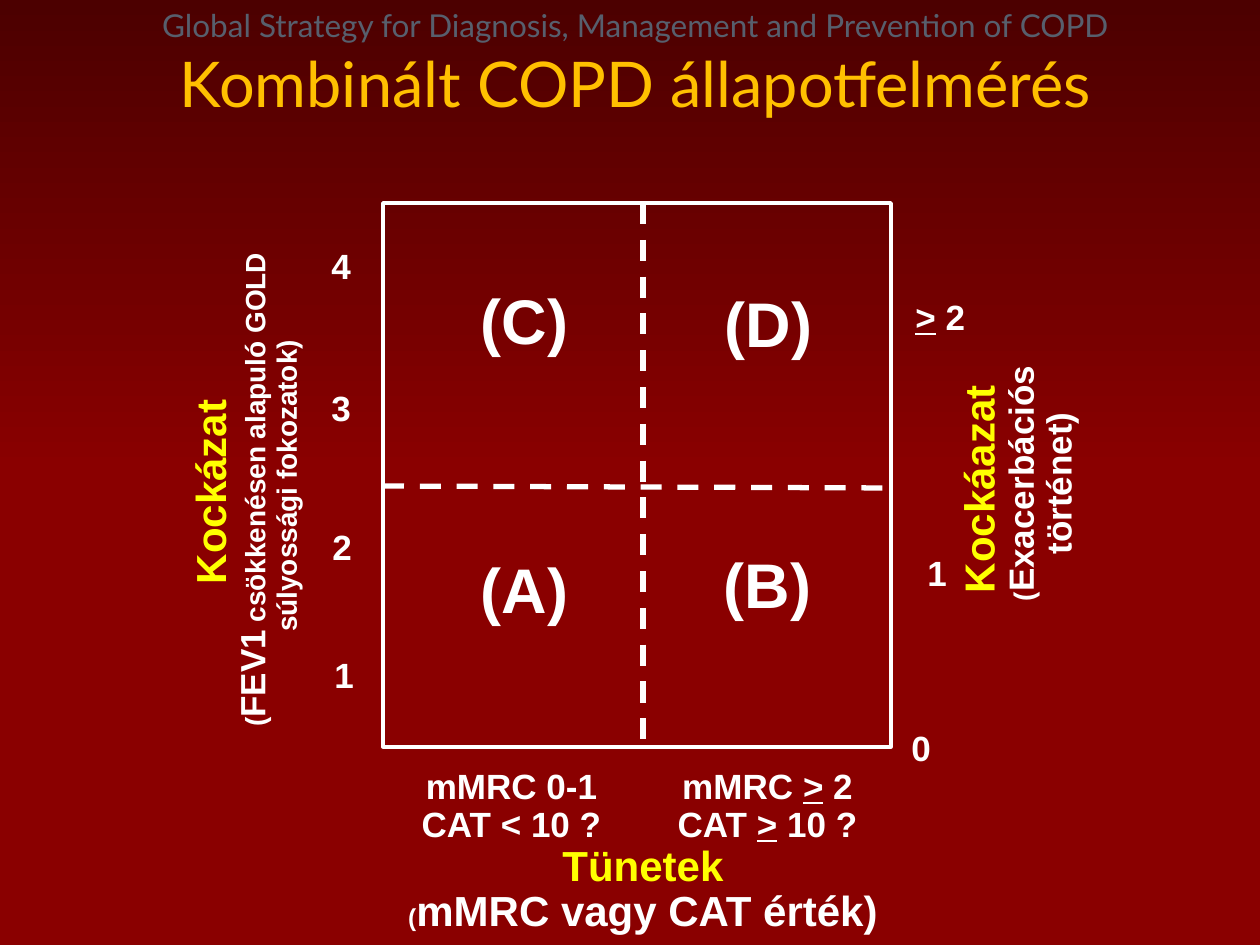
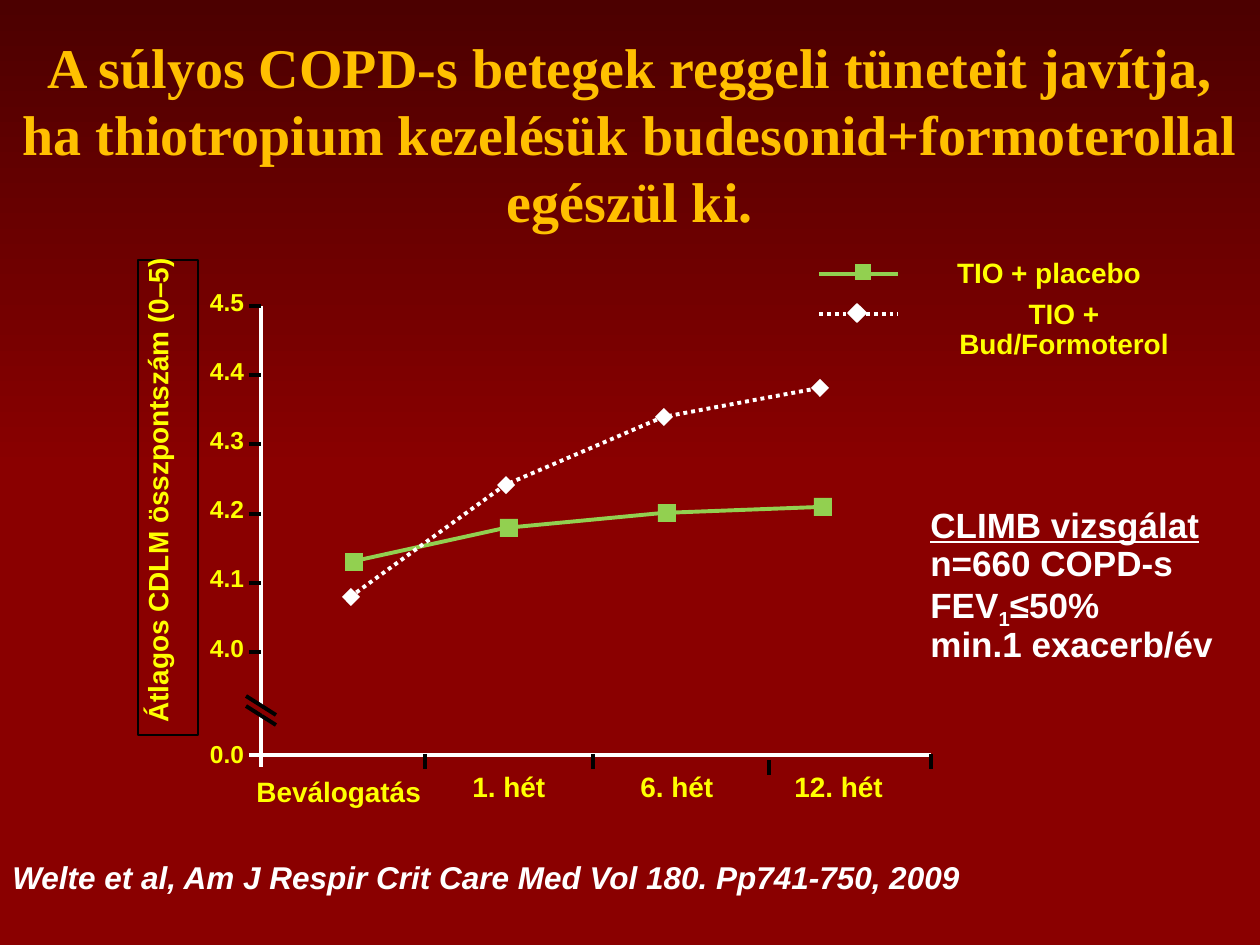
import pptx
import pptx.dml.color
import pptx.enum.dml
import pptx.enum.shapes
import pptx.enum.text
import pptx.oxml.ns
import pptx.util
from dataclasses import dataclass
from lxml import etree

RGBColor = pptx.dml.color.RGBColor
WHITE = RGBColor(0xFF, 0xFF, 0xFF)
BLACK = RGBColor(0x00, 0x00, 0x00)
YELLOW = RGBColor(0xFF, 0xFF, 0x00)
GOLD = RGBColor(0xFF, 0xC0, 0x00)
GREY = RGBColor(0x57, 0x5F, 0x6D)
GREEN = RGBColor(0x92, 0xD0, 0x50)
DARK_RED = RGBColor(0x4C, 0x00, 0x00)
RED = RGBColor(0x8A, 0x00, 0x00)

LEFT = pptx.enum.text.PP_ALIGN.LEFT
CENTER = pptx.enum.text.PP_ALIGN.CENTER
DASH = pptx.enum.dml.MSO_LINE.DASH
DOTS = pptx.enum.dml.MSO_LINE.ROUND_DOT
SHAPE = pptx.enum.shapes.MSO_SHAPE

EMU_PER_PX = 914400 / 126
TITLE_ONLY = 5
AXIS_X, AXIS_TOP, AXIS_BOTTOM = 261, 306, 755
SCALE_HEIGHT = 346
MARKER_SIZE = 18
TICK_LABELS = ["4.5", "4.4", "4.3", "4.2", "4.1", "4.0"]
WEEKS = ["Beválogatás", "1. hét", "6. hét", "12. hét"]
PLACEBO_POINTS = [(350, 562), (505, 528), (663, 513), (819, 507)]
FORMOTEROL_POINTS = [(350, 597), (505, 485), (663, 417), (819, 388)]


@dataclass
class Run:
    text: str
    size: int = 20
    color: RGBColor = WHITE
    underline: bool = False
    italic: bool = False
    baseline: int = 0


def px(*lengths):
    return [pptx.util.Emu(round(length * EMU_PER_PX)) for length in lengths]


def style_font(font, name, size, color, bold):
    font.name = name
    font.size = pptx.util.Pt(size)
    font.color.rgb = color
    font.bold = bold


def style_line(line, color, width, dash=None):
    line.color.rgb = color
    line.width = pptx.util.Pt(width)
    if dash:
        line.dash_style = dash


def set_background(master):
    fill = master.background.fill
    fill.gradient()
    fill.gradient_angle = 270
    for stop, color, position in zip(fill.gradient_stops, (DARK_RED, RED), (0, 0.5)):
        stop.color.rgb = color
        stop.position = position


def add_titled_slide(presentation, box, lines, font_name, bold=False):
    """Lines are (text, size, color), separated by line breaks."""
    slide = presentation.slides.add_slide(presentation.slide_layouts[TITLE_ONLY])
    title = slide.shapes.title
    title.left, title.top, title.width, title.height = px(*box)
    frame = title.text_frame
    frame.text = "\v".join(text for text, _, _ in lines)
    frame.auto_size = pptx.enum.text.MSO_AUTO_SIZE.NONE
    frame.vertical_anchor = pptx.enum.text.MSO_ANCHOR.TOP
    paragraph = frame.paragraphs[0]
    paragraph.alignment = CENTER
    for run, (_, size, color) in zip(paragraph.runs, lines):
        style_font(run.font, font_name, size, color, bold)
    return slide


def fill_text(frame, paragraphs, alignment):
    for index, runs in enumerate(paragraphs):
        paragraph = frame.add_paragraph() if index else frame.paragraphs[0]
        paragraph.alignment = alignment
        paragraph.line_spacing = 0.9
        for part in runs:
            run = paragraph.add_run()
            run.text = part.text
            style_font(run.font, "Arial", part.size, part.color, True)
            run.font.underline = part.underline
            run.font.italic = part.italic
            if part.baseline:
                run.font._element.set("baseline", str(part.baseline * 1000))


def add_text(slide, box, paragraphs, alignment=LEFT, wrap=False, rotation=0, margins=True):
    text_box = slide.shapes.add_textbox(*px(*box))
    text_box.rotation = rotation
    frame = text_box.text_frame
    frame.word_wrap = wrap
    frame.auto_size = pptx.enum.text.MSO_AUTO_SIZE.SHAPE_TO_FIT_TEXT
    if not margins:
        frame.margin_left = frame.margin_right = frame.margin_top = frame.margin_bottom = 0
    fill_text(frame, paragraphs, alignment)


def add_line(slide, start, end, color, width=2.25, dash=None):
    connector = slide.shapes.add_connector(
        pptx.enum.shapes.MSO_CONNECTOR.STRAIGHT, *px(*start, *end))
    style_line(connector.line, color, width, dash)
    etree.SubElement(connector._element.spPr, pptx.oxml.ns.qn("a:effectLst"))


def add_shape(slide, kind, box, fill=None, outline=None, width=1):
    shape = slide.shapes.add_shape(kind, *px(*box))
    shape.shadow.inherit = False
    if fill is None:
        shape.fill.background()
    else:
        shape.fill.solid()
        shape.fill.fore_color.rgb = fill
    if outline is None:
        shape.line.fill.background()
    else:
        style_line(shape.line, outline, width)
    return shape


def add_curve(slide, points, color, dash=None):
    builder = slide.shapes.build_freeform(*points[0], scale=EMU_PER_PX)
    builder.add_line_segments(points[1:], close=False)
    curve = builder.convert_to_shape()
    curve.shadow.inherit = False
    curve.fill.background()
    style_line(curve.line, color, 2.25, dash)


def add_markers(slide, kind, points, color, shift):
    """Centre a marker on each point, moved right by shift."""
    half = MARKER_SIZE / 2
    for x, y in points:
        add_shape(slide, kind, (x + shift - half, y - half, MARKER_SIZE, MARKER_SIZE), color)


def add_score_curves(slide):
    add_curve(slide, PLACEBO_POINTS, GREEN)
    add_curve(slide, FORMOTEROL_POINTS, WHITE, DOTS)
    add_markers(slide, SHAPE.RECTANGLE, PLACEBO_POINTS, GREEN, 4)
    add_markers(slide, SHAPE.DIAMOND, FORMOTEROL_POINTS, WHITE, 1)


def add_broken_axes(slide):
    add_line(slide, (AXIS_X, AXIS_TOP), (AXIS_X, 706), WHITE)
    add_line(slide, (AXIS_X, 714), (AXIS_X, 767), WHITE)
    add_line(slide, (249, AXIS_BOTTOM), (931, AXIS_BOTTOM), WHITE)
    for top in (696, 706):
        add_line(slide, (246, top), (276, top + 19), BLACK)
    step = SCALE_HEIGHT / (len(TICK_LABELS) - 1)
    heights = [AXIS_TOP + step * index for index in range(len(TICK_LABELS))]
    for y in heights:
        add_line(slide, (249, y), (AXIS_X, y), BLACK)
    for label, y in zip(TICK_LABELS + ["0.0"], heights + [AXIS_BOTTOM + 3]):
        add_text(slide, (210, y - 16, 38, 30), [[Run(label, 14, YELLOW)]], margins=False)
    for x, top in ((425, 754), (593, 754), (769, 760), (931, 754)):
        add_line(slide, (x, top), (x, top + 15), BLACK)
    places = ((244, 772, 198), (460, 767, 98), (628, 767, 98), (782, 767, 117))
    for week, (left, top, width) in zip(WEEKS, places):
        add_text(slide, (left, top, width, 47), [[Run(week, 16, YELLOW)]])


def add_axis_title(slide):
    shape = add_shape(slide, SHAPE.RECTANGLE, (138, 260, 60, 475), outline=BLACK, width=0.75)
    frame = shape.text_frame
    frame._txBody.bodyPr.set("vert", "vert270")
    frame.word_wrap = False
    frame.vertical_anchor = pptx.enum.text.MSO_ANCHOR.TOP
    fill_text(frame, [[Run("Átlagos CDLM összpontszám (0–5)", 16, YELLOW)]], LEFT)


def add_legend(slide):
    add_line(slide, (819, 274), (898, 274), GREEN)
    add_line(slide, (819, 314), (898, 314), WHITE, dash=DOTS)
    add_shape(slide, SHAPE.RECTANGLE, (855, 264, 16, 16), GREEN)
    add_shape(slide, SHAPE.DIAMOND, (848, 304, 18, 18), WHITE, WHITE)
    for label, box in (("TIO + placebo", (949, 259, 200, 34)),
                       ("TIO + Bud/Formoterol", (949, 300, 230, 60))):
        add_text(slide, box, [[Run(label, 16, YELLOW)]], CENTER, wrap=True, margins=False)


def add_risk_grid(slide):
    left, top, width, height = 383, 203, 508, 544
    add_shape(slide, SHAPE.RECTANGLE, (left, top, width, height), outline=WHITE, width=2)
    add_line(slide, (643, top), (643, top + height), WHITE, 3, DASH)
    add_line(slide, (left, 486), (left + width, 488), WHITE, 3, DASH)
    groups = (("(C)", 468, 284), ("(D)", 712, 287), ("(A)", 468, 553), ("(B)", 711, 548))
    for group, x, y in groups:
        add_text(slide, (x, y, 113, 89), [[Run(group, 36)]], CENTER)


def add_risk_scales(slide):
    stages = (("4", 319, 243), ("3", 319, 385), ("2", 320, 524), ("1", 322, 652))
    exacerbations = (("1", 915, 550), ("0", 899, 725))
    for label, x, y in stages + exacerbations:
        add_text(slide, (x, y, 45, 55), [[Run(label)]])
    add_text(slide, (903, 294, 86, 55), [[Run(">", underline=True), Run(" 2")]])


def add_risk_captions(slide):
    add_text(slide, (6, 407, 513, 158), [
        [Run("Kockázat ", 24, YELLOW)],
        [Run("(", 16), Run("FEV1"), Run(" csökkenésen alapuló GOLD ", 16)],
        [Run("súlyossági fokozatok)", 16)],
    ], CENTER, rotation=270)
    add_text(slide, (820, 416, 399, 135), [
        [Run("Kockáazat ", 24, YELLOW)],
        [Run("(", 16), Run("Exacerbációs történet)")],
    ], CENTER, wrap=True, rotation=270)


def add_symptom_captions(slide):
    at_least = Run(">", underline=True)
    add_text(slide, (408, 763, 207, 97),
             [[Run("mMRC 0-1")], [Run("CAT < 10 ?")]], CENTER)
    add_text(slide, (664, 763, 207, 97), [
        [Run("mMRC "), at_least, Run(" 2")],
        [Run("CAT "), at_least, Run(" 10 ?")],
    ], CENTER)
    add_text(slide, (393, 839, 500, 105), [
        [Run("Tünetek", 24, YELLOW)],
        [Run("(", 14), Run("mMRC vagy CAT érték)", 24)],
    ], CENTER)


def build_assessment_slide(presentation):
    slide = add_titled_slide(presentation, (42, 0, 1187, 126), [
        ("Global Strategy for Diagnosis, Management and Prevention of COPD", 18, GREY),
        ("Kombinált COPD állapotfelmérés", 36, GOLD),
    ], "Lato")
    add_risk_captions(slide)
    add_risk_grid(slide)
    add_risk_scales(slide)
    add_symptom_captions(slide)


def build_trial_slide(presentation):
    slide = add_titled_slide(presentation, (0, 26, 1260, 193), [
        ("A súlyos COPD-s betegek reggeli tüneteit javítja, ha thiotropium kezelésük "
         "budesonid+formoterollal egészül ki.", 32, GOLD),
    ], "Times New Roman", bold=True)
    add_broken_axes(slide)
    add_score_curves(slide)
    add_axis_title(slide)
    add_legend(slide)
    add_text(slide, (918, 502, 342, 165), [
        [Run("CLIMB vizsgálat", underline=True)],
        [Run("n=660 COPD-s")],
        [Run("FEV"), Run("1", baseline=-25), Run("≤50%")],
        [Run("min.1 exacerb/év")],
    ], wrap=True)
    add_text(slide, (0, 856, 1047, 50), [
        [Run("Welte et al, Am J Respir Crit Care Med Vol 180. Pp741-750, 2009", 18, italic=True)],
    ], wrap=True)


def main():
    presentation = pptx.Presentation()
    presentation.slide_width, presentation.slide_height = px(1260, 945)
    set_background(presentation.slide_master)
    build_assessment_slide(presentation)
    build_trial_slide(presentation)
    presentation.save("out.pptx")


if __name__ == "__main__":
    main()
